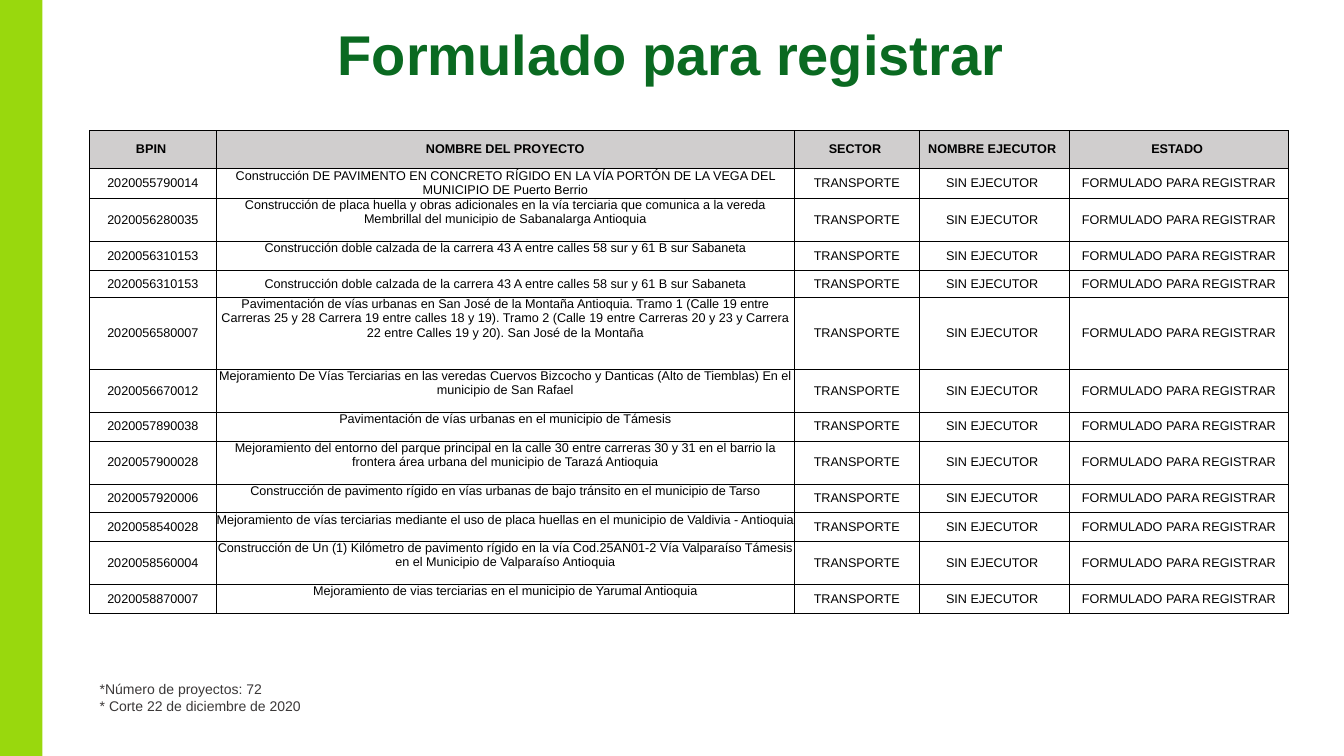
"""Build the slide that lists the projects formulated for registration."""
import dataclasses

import pptx
import pptx.dml.color
import pptx.enum.shapes
import pptx.enum.text
import pptx.oxml
import pptx.oxml.ns
import pptx.util

ALIGN = pptx.enum.text.PP_ALIGN
ANCHOR = pptx.enum.text.MSO_ANCHOR
TOP, MIDDLE = ANCHOR.TOP, ANCHOR.MIDDLE


@dataclasses.dataclass(frozen=True)
class Theme:
    """Colours, font and type sizes."""

    font: str = "Arial"
    title: str = "0A6A21"
    bar: str = "99D80D"
    note: str = "3B3838"
    ink: str = "000000"
    header: str = "D0CECE"
    title_size: int = 40
    note_size: int = 10
    table_size: int = 9
    border: float = 0.5


class Page:
    """The current slide and its style, measured in percent of the slide."""

    def __init__(self, deck, theme):
        """Add a title-only slide to the deck."""
        self.deck = deck
        self.theme = theme
        self.slide = deck.slides.add_slide(deck.slide_layouts[5])

    def across(self, share):
        """Turn a percentage of the slide width into a length."""
        return round(self.deck.slide_width * share / 100)

    def down(self, share):
        """Turn a percentage of the slide height into a length."""
        return round(self.deck.slide_height * share / 100)

    def area(self, left, top, width, height):
        """Turn four percentages into a position and size."""
        return self.across(left), self.down(top), self.across(width), self.down(height)

    def style(self, frame, size, colour, bold=False, align=ALIGN.LEFT):
        """Format every paragraph and run of a text frame."""
        for para in frame.paragraphs:
            para.alignment = align
            for span in para.runs:
                span.font.name = self.theme.font
                span.font.size = pptx.util.Pt(size)
                span.font.bold = bold
                span.font.color.rgb = pptx.dml.color.RGBColor.from_string(colour)

    def title(self, text, area):
        """Place the title in its placeholder."""
        box = self.slide.shapes.title
        box.left, box.top, box.width, box.height = self.area(*area)
        frame = box.text_frame
        frame.text = text
        frame.word_wrap = True
        frame.vertical_anchor = TOP
        frame.auto_size = pptx.enum.text.MSO_AUTO_SIZE.SHAPE_TO_FIT_TEXT
        self.style(frame, self.theme.title_size, self.theme.title, True, ALIGN.CENTER)

    def bar(self, area):
        """Draw a plain coloured bar."""
        kind = pptx.enum.shapes.MSO_SHAPE.RECTANGLE
        box = self.slide.shapes.add_shape(kind, *self.area(*area))
        box.shadow.inherit = False
        box.fill.solid()
        box.fill.fore_color.rgb = pptx.dml.color.RGBColor.from_string(self.theme.bar)
        box.line.fill.background()

    def note(self, text, area):
        """Write a small note."""
        frame = self.slide.shapes.add_textbox(*self.area(*area)).text_frame
        frame.text = text
        frame.word_wrap = True
        frame.auto_size = pptx.enum.text.MSO_AUTO_SIZE.SHAPE_TO_FIT_TEXT
        self.style(frame, self.theme.note_size, self.theme.note)

    def outline(self, cell):
        """Draw the four borders of a table cell."""
        width = pptx.util.Pt(self.theme.border)
        for side in ("lnL", "lnR", "lnT", "lnB"):
            cell._tc.get_or_add_tcPr().append(pptx.oxml.parse_xml(
                f'<a:{side} {pptx.oxml.ns.nsdecls("a")} w="{width}"><a:solidFill>'
                f'<a:srgbClr val="{self.theme.ink}"/></a:solidFill></a:{side}>'))

    def cell(self, cell, text, anchor, header):
        """Fill and format one table cell."""
        cell.text_frame.text = text
        cell.margin_left = cell.margin_right = cell.margin_top = cell.margin_bottom = 0
        cell.vertical_anchor = anchor
        self.outline(cell)
        if header:
            cell.fill.solid()
            cell.fill.fore_color.rgb = pptx.dml.color.RGBColor.from_string(self.theme.header)
        else:
            cell.fill.background()
        self.style(cell.text_frame, self.theme.table_size, self.theme.ink, header, ALIGN.CENTER)

    def table(self, left, top, widths, heights, rows, name_anchors):
        """Draw a table whose first row is the header."""
        area = self.area(left, top, sum(widths), sum(heights))
        table = self.slide.shapes.add_table(len(rows), len(widths), *area).table
        table.horz_banding = False
        for column, width in zip(table.columns, widths):
            column.width = self.across(width)
        for index, (row, height) in enumerate(zip(table.rows, heights)):
            row.height = self.down(height)
            for place, (cell, text) in enumerate(zip(row.cells, rows[index])):
                anchor = name_anchors[index] if place == 1 else MIDDLE
                self.cell(cell, text, anchor, index == 0)


HEADINGS = ("BPIN ", "NOMBRE DEL PROYECTO", "SECTOR ", "NOMBRE EJECUTOR ", "ESTADO ")
SHARED = ("TRANSPORTE", "SIN EJECUTOR ", "FORMULADO PARA REGISTRAR")
COLUMN_WIDTHS = (9.38, 43.06, 9.25, 11.17, 16.36)
HEADER_HEIGHT = 4.95
LINE_HEIGHT = 1.9
PROJECTS = (
    ("2020055790014", 1.9, MIDDLE, "Construcción DE PAVIMENTO EN CONCRETO RÍGIDO EN LA VÍA "
     "PORTÓN DE LA VEGA DEL MUNICIPIO DE Puerto Berrio"),
    ("2020056280035", 3, TOP, "Construcción de placa huella y obras adicionales en la vía "
     "terciaria que comunica a la vereda Membrillal del municipio de Sabanalarga Antioquia"),
    ("2020056310153", 2, TOP, "Construcción doble calzada de la carrera 43 A entre calles "
     "58 sur y 61 B sur Sabaneta"),
    ("2020056310153", 1.9, MIDDLE, "Construcción doble calzada de la carrera 43 A entre calles "
     "58 sur y 61 B sur Sabaneta"),
    ("2020056580007", 5, TOP, "Pavimentación de vías urbanas en San José de la Montaña "
     "Antioquia. Tramo 1 (Calle 19 entre Carreras 25 y 28 Carrera 19 entre calles 18 y 19). "
     "Tramo 2 (Calle 19 entre Carreras 20 y 23 y Carrera 22 entre Calles 19 y 20). "
     "San José de la Montaña"),
    ("2020056670012", 3, TOP, "Mejoramiento De Vías Terciarias en las veredas Cuervos Bizcocho "
     "y Danticas (Alto de Tiemblas) En el municipio de San Rafael"),
    ("2020057890038", 2, TOP, "Pavimentación de vías urbanas en el municipio de Támesis"),
    ("2020057900028", 3, TOP, "Mejoramiento del entorno del parque principal en la calle 30 "
     "entre carreras 30 y 31 en el barrio la frontera área urbana del municipio de Tarazá "
     "Antioquia"),
    ("2020057920006", 2, TOP, "Construcción de pavimento rígido en vías urbanas de bajo "
     "tránsito en el municipio de Tarso"),
    ("2020058540028", 2, TOP, "Mejoramiento de vías terciarias mediante el uso de placa "
     "huellas en el municipio de Valdivia - Antioquia"),
    ("2020058560004", 3, TOP, "Construcción de Un (1) Kilómetro de pavimento rígido en la vía "
     "Cod.25AN01-2 Vía Valparaíso Támesis en el Municipio de Valparaíso Antioquia"),
    ("2020058870007", 2, TOP, "Mejoramiento de vias terciarias en el municipio de Yarumal "
     "Antioquia"),
)


def main():
    """Build and save the deck."""
    deck = pptx.Presentation()
    deck.slide_width = pptx.util.Inches(13.33)
    deck.slide_height = pptx.util.Inches(7.5)
    page = Page(deck, Theme())
    page.title("Formulado para registrar", (9.45, 1.87, 80.87, 10.27))
    page.bar((0, 0, 3.15, 100))
    page.note("*Número de proyectos: 72\n* Corte 22 de diciembre de 2020",
              (6.68, 89.33, 25.28, 5.87))
    rows = [HEADINGS] + [(code, name, *SHARED) for code, _, _, name in PROJECTS]
    heights = [HEADER_HEIGHT] + [lines * LINE_HEIGHT for _, lines, _, _ in PROJECTS]
    anchors = [MIDDLE] + [anchor for _, _, anchor, _ in PROJECTS]
    page.table(6.68, 17.27, COLUMN_WIDTHS, heights, rows, anchors)
    deck.save("out.pptx")


if __name__ == "__main__":
    main()
